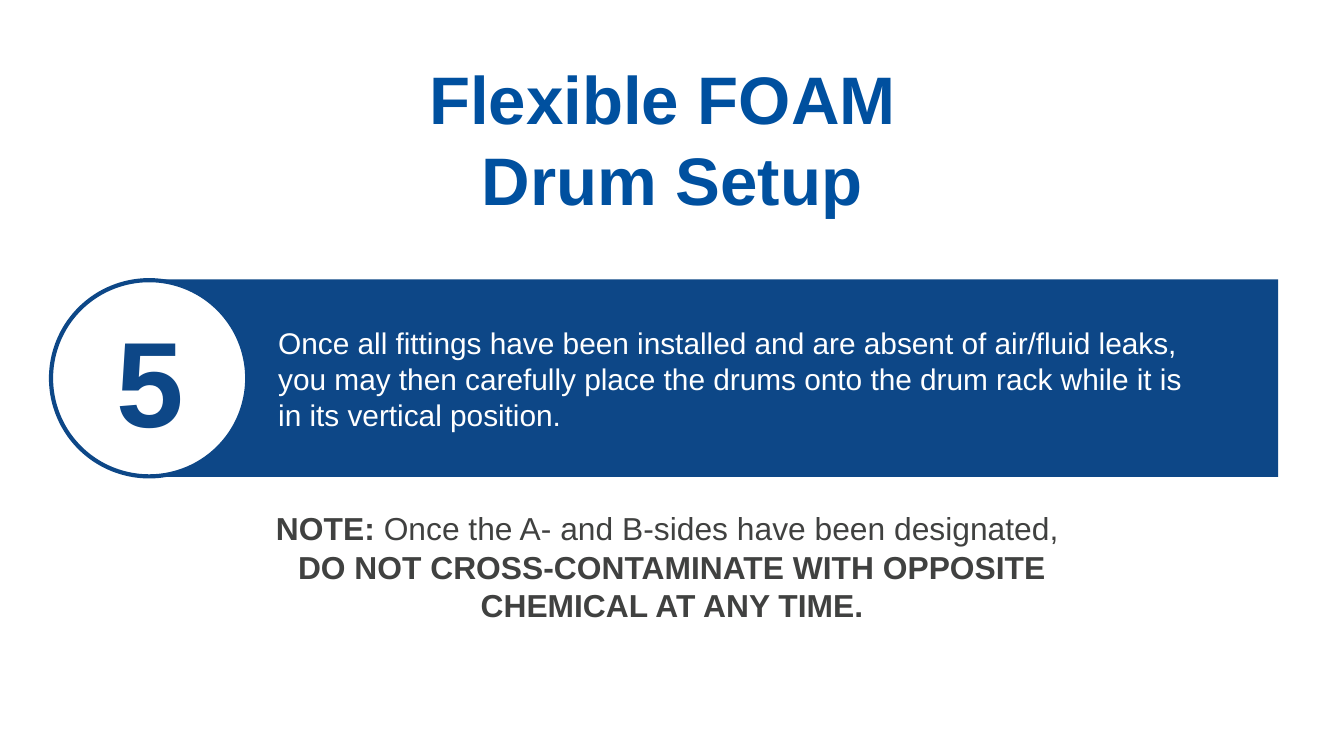
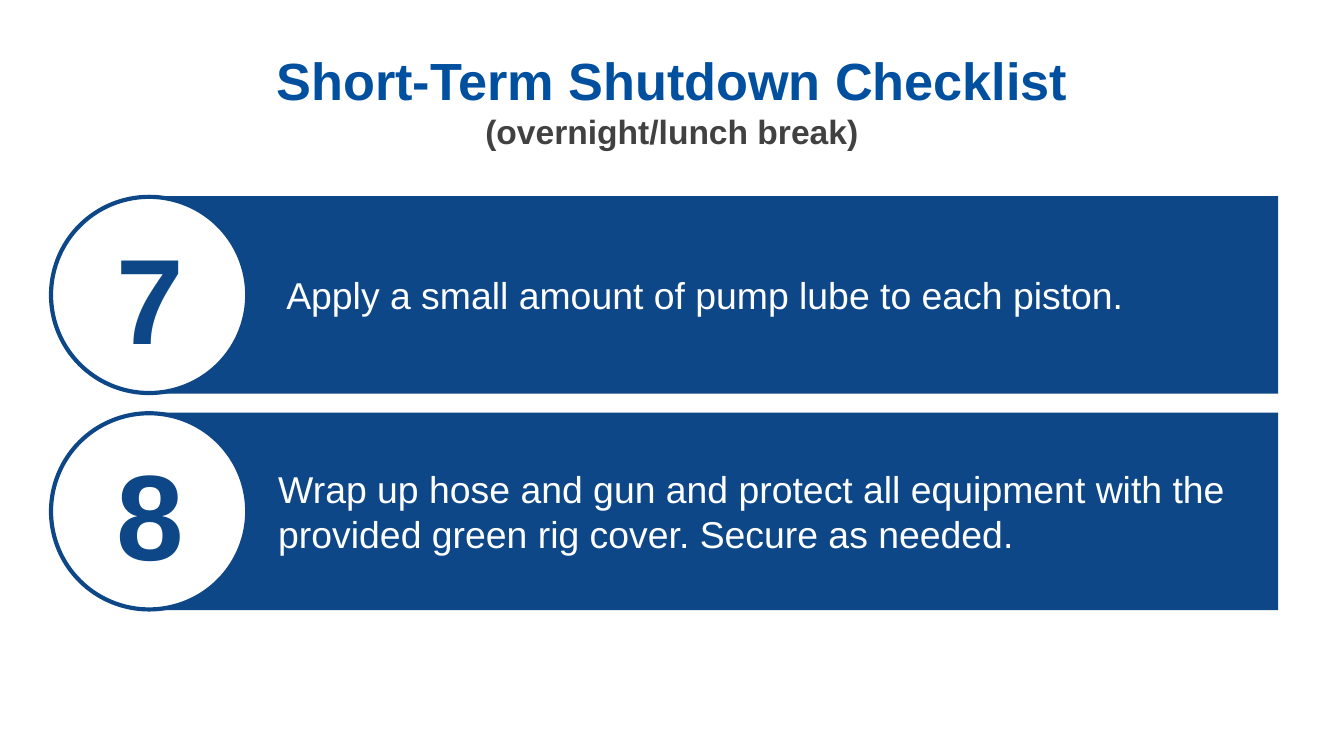
"""Build two slides of numbered equipment instructions."""
from typing import NamedTuple

from pptx import Presentation
from pptx.dml.color import RGBColor
from pptx.enum.shapes import MSO_SHAPE as SHAPE
from pptx.enum.text import MSO_ANCHOR as ANCHOR, MSO_AUTO_SIZE as AUTO, PP_ALIGN as ALIGN
from pptx.util import Inches, Pt

TITLE_BLUE = RGBColor(0x00, 0x50, 0x9F)
BAND_BLUE = RGBColor(0x0D, 0x47, 0x87)
GREY = RGBColor(0x40, 0x41, 0x40)
WHITE = RGBColor(0xFF, 0xFF, 0xFF)
FONT = "Arial"
STEP_PITCH = 1.61
BAND_HEIGHT = 1.47
CIRCLE_SIZE = 1.46


class Run(NamedTuple):
    """A stretch of text with its own format."""
    text: str
    size: float
    color: RGBColor
    bold: bool = False


class Step(NamedTuple):
    """A numbered instruction band."""
    number: int
    text: str
    size: float
    inset_left: float = 0.5
    inset_right: float = 0.3
    indent: float = 0.44


def write(sp, *runs: Run, align=ALIGN.CENTER, anchor=ANCHOR.TOP, auto=AUTO.NONE,
          left: float = 0.1, right: float = 0.1, indent: float = 0) -> None:
    """Fill a shape with one paragraph of formatted runs."""
    tf = sp.text_frame
    tf.word_wrap, tf.auto_size, tf.vertical_anchor = True, auto, anchor
    tf.margin_left, tf.margin_right = Inches(left), Inches(right)
    tf.margin_top = tf.margin_bottom = Inches(0.05)
    p = tf.paragraphs[0]
    p.alignment = align
    if indent:
        pPr = p._p.get_or_add_pPr()
        pPr.set("marL", str(Inches(indent)))
        pPr.set("indent", "0")
    for run in runs:
        for i, line in enumerate(run.text.split("\n")):
            if i:
                p.add_line_break()
            if line:
                r = p.add_run()
                r.text = line
                r.font.name, r.font.size = FONT, Pt(run.size)
                r.font.bold, r.font.color.rgb = run.bold, run.color


def add_box(shapes, x: float, y: float, w: float, h: float):
    """Add a text box."""
    return shapes.add_textbox(Inches(x), Inches(y), Inches(w), Inches(h))


def add_shape(shapes, kind, x: float, y: float, w: float, h: float, fill: RGBColor):
    """Add a flat filled shape without an outline."""
    sp = shapes.add_shape(kind, Inches(x), Inches(y), Inches(w), Inches(h))
    sp.shadow.inherit = False
    sp.fill.solid()
    sp.fill.fore_color.rgb = fill
    sp.line.fill.background()
    return sp


def add_step(s, step: Step, y: float) -> None:
    """Draw a band with its number in a circle as one group."""
    shapes = s.shapes.add_group_shape().shapes
    band = add_shape(shapes, SHAPE.RECTANGLE, 1.13, y, 8.38, BAND_HEIGHT, BAND_BLUE)
    write(band, Run(step.text, step.size, WHITE), align=ALIGN.LEFT, anchor=ANCHOR.MIDDLE,
          left=step.inset_left, right=step.inset_right, indent=step.indent)
    circle_y = y + (BAND_HEIGHT - CIRCLE_SIZE) / 2
    circle = add_shape(shapes, SHAPE.OVAL, 0.38, circle_y, CIRCLE_SIZE, CIRCLE_SIZE, WHITE)
    circle.line.color.rgb, circle.line.width = BAND_BLUE, Pt(2.25)
    number = add_box(shapes, 0.39, y + 0.15, 1.45, 1.19)
    write(number, Run(str(step.number), 65, BAND_BLUE, True), auto=AUTO.SHAPE_TO_FIT_TEXT)


def add_slide(prs, title_y: float, title: list[Run], steps_y: float, steps: list[Step]):
    """Add a slide with a centred title and a stack of steps."""
    s = prs.slides.add_slide(prs.slide_layouts[5])
    sp = s.shapes.title
    sp.left, sp.top, sp.width, sp.height = map(Inches, (0, title_y, 10, 0.94))
    write(sp, *title, anchor=ANCHOR.MIDDLE)
    for i, step in enumerate(steps):
        add_step(s, step, steps_y + i * STEP_PITCH)
    return s


def main() -> None:
    """Build and save the presentation."""
    prs = Presentation()
    prs.slide_width = Inches(10)
    prs.slide_height = Inches(10 * 9 / 16)

    s = add_slide(prs, 0.56, [Run("Flexible FOAM \nDrum Setup", 36, TITLE_BLUE, True)], 2.08, [
        Step(5, "Once all fittings have been installed and are absent of air/fluid leaks, \n"
                "you may then carefully place the drums onto the drum rack while it is \n"
                "in its vertical position.", 16, inset_right=0.1)])
    write(add_box(s.shapes, 1.49, 3.74, 7.02, 0.96),
          Run("NOTE: ", 17, GREY, True),
          Run("Once the A- and B-sides have been designated, \n", 17, GREY),
          Run("DO NOT CROSS-CONTAMINATE WITH OPPOSITE CHEMICAL AT ANY TIME.", 17, GREY, True),
          auto=AUTO.SHAPE_TO_FIT_TEXT)

    add_slide(prs, 0.27, [Run("Short-Term Shutdown Checklist\n", 28, TITLE_BLUE, True),
                          Run("(overnight/lunch break)", 18, GREY, True)], 1.46, [
        Step(7, "Apply a small amount of pump lube to each piston.", 20, inset_left=1, indent=0),
        Step(8, "Wrap up hose and gun and protect all equipment with the provided green "
                "rig cover. Secure as needed.", 20)])
    prs.save("out.pptx")


if __name__ == "__main__":
    main()
